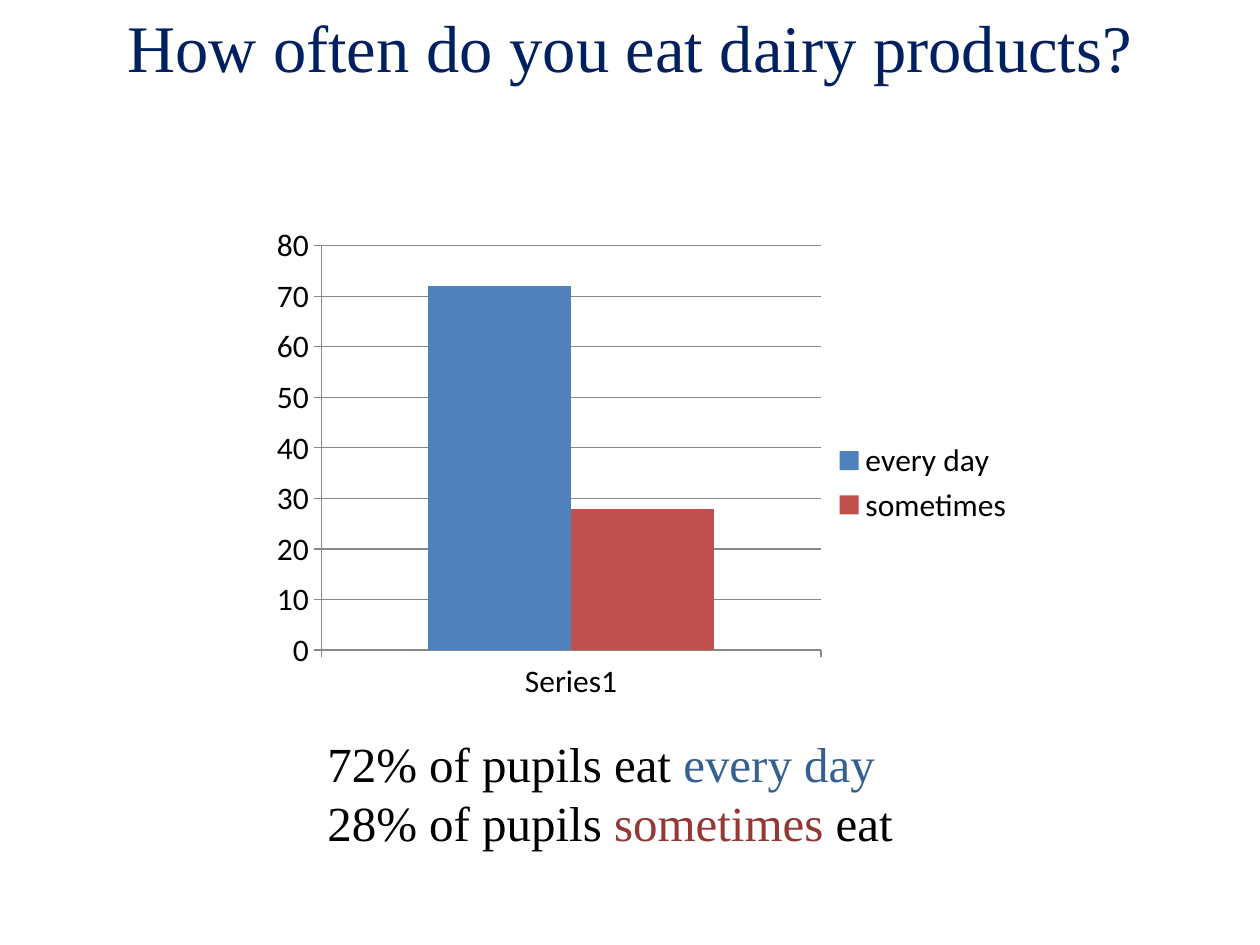
from lxml.etree import SubElement
from pptx import Presentation
from pptx.chart.data import CategoryChartData
from pptx.dml.color import RGBColor
from pptx.enum.chart import XL_CHART_TYPE, XL_LEGEND_POSITION, XL_TICK_MARK
from pptx.enum.text import MSO_ANCHOR, PP_ALIGN
from pptx.oxml.ns import qn
from pptx.util import Inches, Pt

WIDE, HIGH = Inches(10), Inches(7.5)
SERIF, SANS = "Times New Roman", "Calibri"
HUES = {
    "title": "002060", "text": "000000", "axis": "878787",
    "blue": "4F81BD", "red": "C0504D",
    "navy": "376092", "wine": "953735",
}
PLOT = {"x": 0.085, "y": 0.034, "w": 0.648, "h": 0.795}


def rgb(name):
    """Look up a named colour."""
    return RGBColor.from_string(HUES[name])


def span(x, y, w, h):
    """Turn shares of the slide into left, top, width and height."""
    return int(x * WIDE), int(y * HIGH), int(w * WIDE), int(h * HIGH)


def style(font, face, size, hue):
    """Set the face, size and colour of a font."""
    font.name, font.size = face, Pt(size)
    font.color.rgb = rgb(hue)


def write(para, runs, size):
    """Add coloured runs to a paragraph."""
    for text, hue in runs:
        run = para.add_run()
        run.text = text
        style(run.font, SERIF, size, hue)


def add_title(slide, text):
    """Fill the title across the top of the slide."""
    title = slide.shapes.title
    title.left, title.top, title.width, title.height = span(0, 0, 1, 0.1)
    frame = title.text_frame
    frame.word_wrap = True
    frame.vertical_anchor = MSO_ANCHOR.TOP
    para = frame.paragraphs[0]
    para.alignment = PP_ALIGN.CENTER
    write(para, [(text, "title")], 38)


def add_notes(slide, lines):
    """Add the findings under the chart."""
    frame = slide.shapes.add_textbox(*span(0.25, 0.77, 0.5, 0.14)).text_frame
    frame.word_wrap = True
    for i, runs in enumerate(lines):
        para = frame.add_paragraph() if i else frame.paragraphs[0]
        write(para, runs, 28)


def set_plot(chart):
    """Pin the inner plot area by shares of the chart."""
    area = chart.plots[0]._element.getparent()
    old = area.find(qn("c:layout"))
    if old is not None:
        area.remove(old)
    layout = SubElement(area, qn("c:layout"))
    area.insert(0, layout)
    manual = SubElement(layout, qn("c:manualLayout"))
    parts = [("layoutTarget", "inner"), ("xMode", "edge"), ("yMode", "edge")]
    for tag, val in parts + list(PLOT.items()):
        SubElement(manual, qn(f"c:{tag}")).set("val", str(val))


def add_bars(slide, group, bars):
    """Add the clustered column chart with its legend."""
    data = CategoryChartData(number_format="0")
    data.categories = [group]
    for name, value, _ in bars:
        data.add_series(name, [value])
    box = span(0.203, 0.24, 0.612, 0.54)
    chart = slide.shapes.add_chart(XL_CHART_TYPE.COLUMN_CLUSTERED, *box, data).chart
    style(chart.font, SANS, 18, "text")
    chart.has_title = False
    chart.has_legend = True
    chart.legend.position = XL_LEGEND_POSITION.RIGHT
    chart.legend.include_in_layout = False
    plot = chart.plots[0]
    plot.vary_by_categories = False
    plot.gap_width, plot.overlap = 150, 0
    for series, (_, _, hue) in zip(plot.series, bars):
        series.format.fill.solid()
        series.format.fill.fore_color.rgb = rgb(hue)
    rise = chart.value_axis
    rise.minimum_scale, rise.maximum_scale, rise.major_unit = 0, 80, 10
    rise.has_major_gridlines = True
    for axis in (rise, chart.category_axis):
        axis.major_tick_mark = XL_TICK_MARK.OUTSIDE
    for part in (rise, chart.category_axis, rise.major_gridlines):
        part.format.line.color.rgb = rgb("axis")
        part.format.line.width = Pt(0.75)
    set_plot(chart)


def main():
    """Build and save the slide."""
    deck = Presentation()
    deck.slide_width, deck.slide_height = WIDE, HIGH
    slide = deck.slides.add_slide(deck.slide_layouts[5])
    add_title(slide, "How often do you eat dairy products?")
    add_notes(slide, [
        [("72% of pupils eat ", "text"), ("every day", "navy")],
        [("28% of pupils ", "text"), ("sometimes", "wine"), (" eat", "text")],
    ])
    add_bars(slide, "Series1", [("every day", 72, "blue"), ("sometimes", 28, "red")])
    deck.save("out.pptx")


if __name__ == "__main__":
    main()
